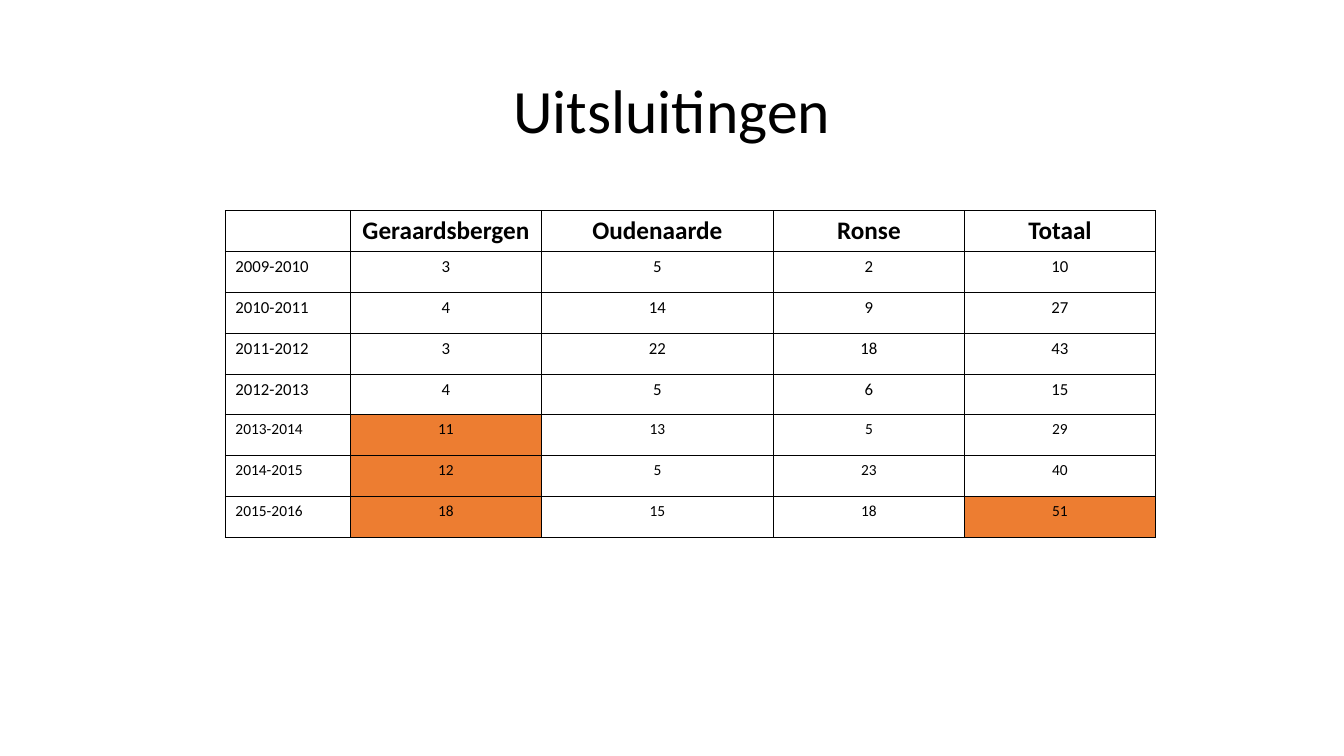
from dataclasses import dataclass

from lxml import etree
from pptx import Presentation
from pptx.dml.color import RGBColor
from pptx.enum import text
from pptx.oxml import ns
from pptx.util import Pt


@dataclass(frozen=True)
class Theme:
    font: str = "Calibri"
    ink: str = "000000"
    paper: str = "FFFFFF"
    mark: str = "ED7D31"
    title: int = 44
    head: int = 18
    body: int = 12
    small: int = 11
    rule: float = 0.75


THEME = Theme()
WIDTHS = [89.3, 136.5, 165.7, 136.5, 136.4]
HEIGHT = 29.2
HEADS = ["", "Geraardsbergen", "Oudenaarde", "Ronse", "Totaal"]
YEARS = [
    ("2009-2010", 3, 5, 2, 10),
    ("2010-2011", 4, 14, 9, 27),
    ("2011-2012", 3, 22, 18, 43),
    ("2012-2013", 4, 5, 6, 15),
    ("2013-2014", 11, 13, 5, 29),
    ("2014-2015", 12, 5, 23, 40),
    ("2015-2016", 18, 15, 18, 51),
]
MARKED = {(5, 1), (6, 1), (7, 1), (7, 4)}  # row, column
SMALL_FROM = 5  # first row set in the small size


def style(par, size, bold=False, align=text.PP_ALIGN.CENTER):
    par.alignment = align
    font = par.font
    font.name, font.size, font.bold = THEME.font, Pt(size), bold
    font.color.rgb = RGBColor.from_string(THEME.ink)


def add_title(slide, words):
    box = slide.shapes.add_textbox(Pt(66), Pt(28.8), Pt(828), Pt(104.4))
    frame = box.text_frame
    frame.word_wrap = True
    frame.vertical_anchor = text.MSO_ANCHOR.MIDDLE
    par = frame.paragraphs[0]
    par.text = words
    par.line_spacing = 0.9
    style(par, THEME.title)


def set_border(cell):
    # Borders come before the fill in the cell properties
    props = cell._tc.get_or_add_tcPr()
    for i, side in enumerate(("lnL", "lnR", "lnT", "lnB")):
        line = etree.Element(ns.qn("a:" + side), w=str(Pt(THEME.rule)))
        fill = etree.SubElement(line, ns.qn("a:solidFill"))
        etree.SubElement(fill, ns.qn("a:srgbClr"), val=THEME.ink)
        props.insert(i, line)


def fill_cell(cell, value, row, col):
    marked = (row, col) in MARKED
    cell.fill.solid()
    cell.fill.fore_color.rgb = RGBColor.from_string(
        THEME.mark if marked else THEME.paper)
    set_border(cell)
    par = cell.text_frame.paragraphs[0]
    par.text = str(value)
    if row == 0:
        style(par, THEME.head, bold=True)
    else:
        size = THEME.small if row >= SMALL_FROM else THEME.body
        align = text.PP_ALIGN.CENTER if col else text.PP_ALIGN.LEFT
        style(par, size, align=align)


def add_grid(slide, rows):
    frame = slide.shapes.add_table(
        len(rows), len(WIDTHS), Pt(161), Pt(150.4),
        Pt(sum(WIDTHS)), Pt(HEIGHT * len(rows)))
    table = frame.table
    table.horz_banding = False
    table.first_row = False
    for col, width in zip(table.columns, WIDTHS):
        col.width = Pt(width)
    for r, values in enumerate(rows):
        table.rows[r].height = Pt(HEIGHT)
        for c, value in enumerate(values):
            fill_cell(table.cell(r, c), value, r, c)


def main():
    deck = Presentation()
    deck.slide_width, deck.slide_height = Pt(960), Pt(540)
    slide = deck.slides.add_slide(deck.slide_layouts[6])

    # Heading
    add_title(slide, "Uitsluitingen")

    # Exclusions by school year and town
    add_grid(slide, [HEADS, *YEARS])

    deck.save("out.pptx")


if __name__ == "__main__":
    main()
